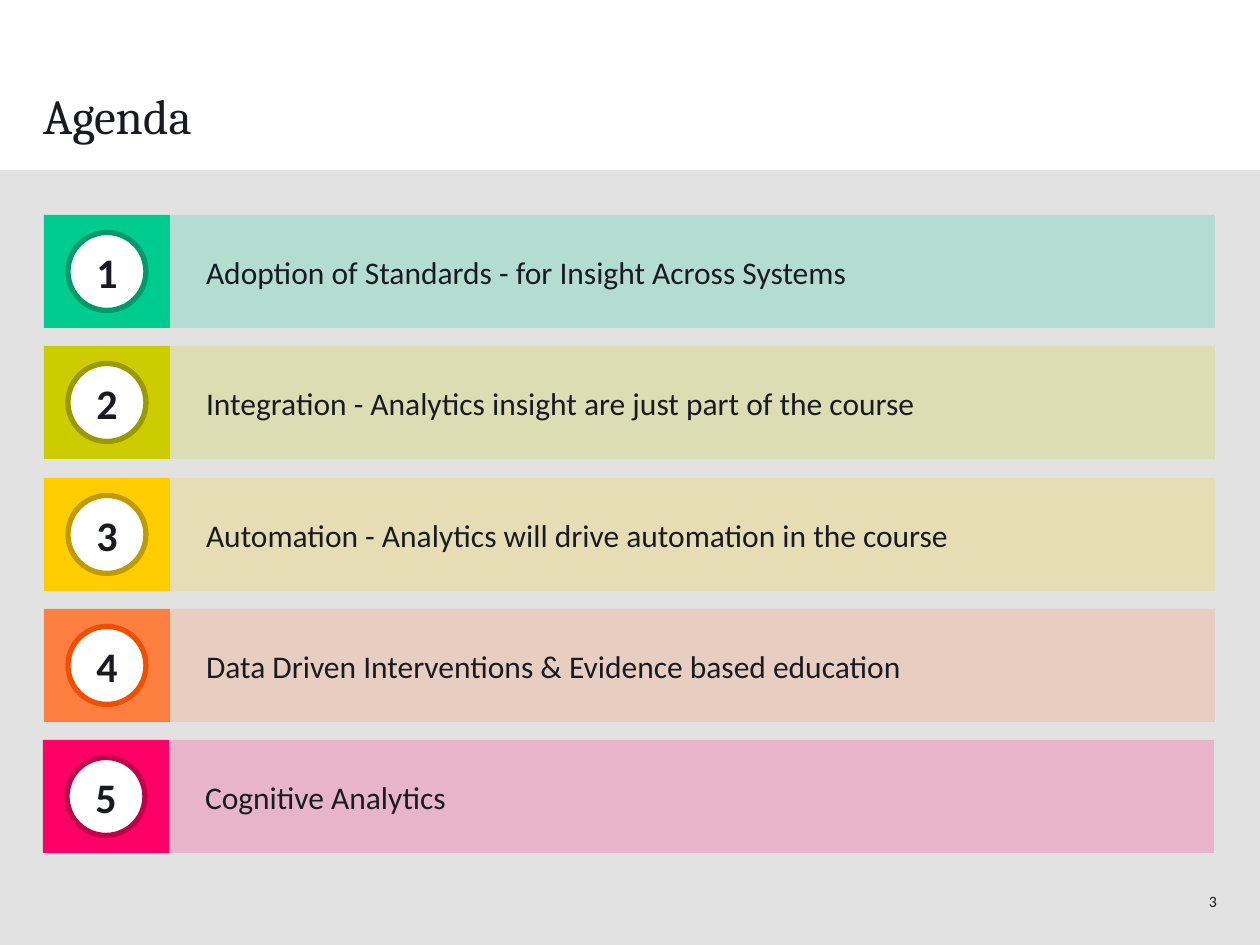
from dataclasses import dataclass

from lxml.etree import SubElement
from pptx import Presentation
from pptx.dml.color import RGBColor
from pptx.enum.shapes import MSO_SHAPE
from pptx.enum.text import MSO_ANCHOR, MSO_AUTO_SIZE, PP_ALIGN
from pptx.oxml.ns import qn
from pptx.util import Pt

TITLE = "Agenda"
PAGE_NUMBER = "3"
# topic, tile colour, ring colour, horizontal shift in px
TOPICS = [
    ("Adoption of Standards - for Insight Across Systems", "00CC90", "00996C", 0),
    ("Integration - Analytics insight are just part of the course", "CCCC00", "999900", 0),
    ("Automation - Analytics will drive automation in the course", "FFCD00", "BF9A00", 0),
    ("Data Driven Interventions & Evidence based education", "FF7F41", "F04E00", 0),
    ("Cognitive Analytics", "FF0066", "BF004C", -1),
]


@dataclass(frozen=True)
class Theme:
    ink: str = "191B23"
    white: str = "FFFFFF"
    panel: str = "E2E2E2"
    heading_font: str = "Cambria"
    body_font: str = "Calibri"
    title_size: int = 28
    number_size: int = 24
    topic_size: int = 18
    page_size: int = 9
    ring_width: int = 3
    bar_opacity: int = 20


THEME = Theme()
EMU_PER_PX = 914400 // 126
PAGE_WIDTH, PAGE_HEIGHT = 1260, 945
PANEL_TOP = 170
ROW_LEFT, FIRST_TOP, LAST_TOP = 44, 215, 740
ROW_HEIGHT, TILE_WIDTH, BAR_WIDTH = 113, 126, 1045
CIRCLE, TEXT_INDENT = 78, 36


def px(*lengths):
    return [round(length * EMU_PER_PX) for length in lengths]


def add_block(page, kind, box, color, opacity=100):
    shape = page.shapes.add_shape(kind, *px(*box))
    shape.shadow.inherit = False
    shape.line.fill.background()
    shape.fill.solid()
    shape.fill.fore_color.rgb = RGBColor.from_string(color)
    if opacity < 100:
        color_node = shape.fill._xPr.find(qn("a:solidFill"))[0]
        SubElement(color_node, qn("a:alpha")).set("val", str(opacity * 1000))
    return shape


def write(shape, text, size, font=THEME.body_font, bold=False,
          align=PP_ALIGN.LEFT, anchor=MSO_ANCHOR.MIDDLE, indent=0):
    frame = shape.text_frame
    frame.word_wrap = True
    frame.auto_size = MSO_AUTO_SIZE.NONE
    frame.vertical_anchor = anchor
    frame.margin_left, = px(indent)
    frame.margin_right = frame.margin_top = frame.margin_bottom = 0
    frame.text = text
    para = frame.paragraphs[0]
    para.alignment = align
    para.font.name = font
    para.font.size = Pt(size)
    para.font.bold = bold
    para.font.color.rgb = RGBColor.from_string(THEME.ink)
    return para


def add_topic(page, index, topic, color, ring_color, shift):
    left = ROW_LEFT + shift
    top = round(FIRST_TOP + index * (LAST_TOP - FIRST_TOP) / (len(TOPICS) - 1))
    add_block(page, MSO_SHAPE.RECTANGLE, (left, top, TILE_WIDTH, ROW_HEIGHT), color)
    bar = add_block(page, MSO_SHAPE.RECTANGLE,
                    (left + TILE_WIDTH, top, BAR_WIDTH, ROW_HEIGHT),
                    color, THEME.bar_opacity)
    write(bar, topic, THEME.topic_size, indent=TEXT_INDENT)

    circle_box = (left + (TILE_WIDTH - CIRCLE) / 2, top + (ROW_HEIGHT - CIRCLE) / 2,
                  CIRCLE, CIRCLE)
    circle = add_block(page, MSO_SHAPE.OVAL, circle_box, THEME.white)
    circle.line.color.rgb = RGBColor.from_string(ring_color)
    circle.line.width = Pt(THEME.ring_width)
    write(circle, str(index + 1), THEME.number_size, bold=True, align=PP_ALIGN.CENTER)


def main():
    deck = Presentation()
    deck.slide_width, deck.slide_height = px(PAGE_WIDTH, PAGE_HEIGHT)
    page = deck.slides.add_slide(deck.slide_layouts[5])

    title = page.shapes.title
    title.left, title.top, title.width, title.height = px(43, 39, 1174, 106)
    para = write(title, TITLE, THEME.title_size, THEME.heading_font,
                 anchor=MSO_ANCHOR.BOTTOM)
    para.line_spacing = 0.9

    add_block(page, MSO_SHAPE.RECTANGLE,
              (0, PANEL_TOP, PAGE_WIDTH, PAGE_HEIGHT - PANEL_TOP), THEME.panel)
    number = page.shapes.add_textbox(*px(1091, 876, 126, 50))
    write(number, PAGE_NUMBER, THEME.page_size, align=PP_ALIGN.RIGHT)

    for index, topic in enumerate(TOPICS):
        add_topic(page, index, *topic)

    deck.save("out.pptx")


if __name__ == "__main__":
    main()
